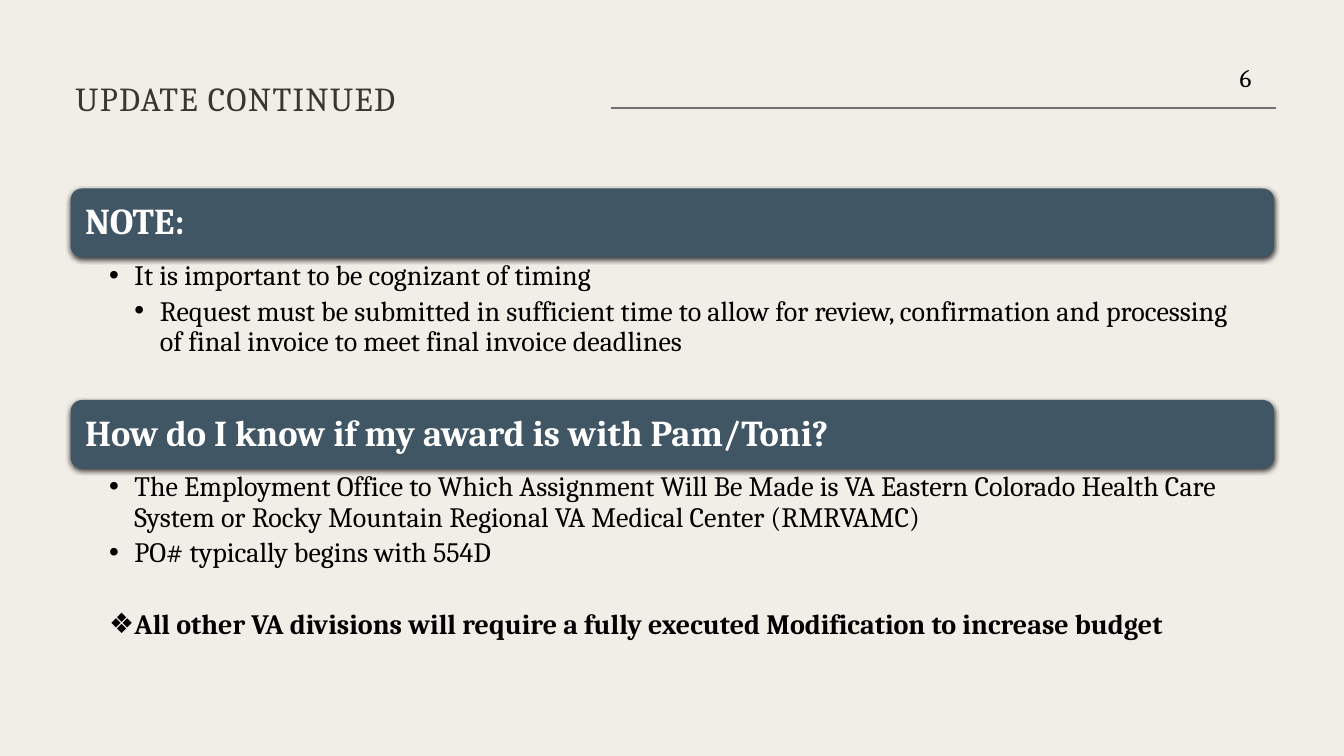
from lxml.etree import SubElement
from pptx import Presentation
from pptx.dml.color import RGBColor
from pptx.enum.shapes import MSO_CONNECTOR, MSO_SHAPE
from pptx.enum.text import MSO_ANCHOR, PP_ALIGN
from pptx.oxml.ns import qn
from pptx.util import Cm, Pt


def tint(code):
    return RGBColor.from_string(code)


class Deck:
    font = "Cambria"
    paper, ink, slate = "F1EDE7", "000000", "415665"
    gray, dark, white = "6F6F74", "3A372F", "FFFFFF"
    step = 0.64  # bullet indent per level, cm

    def __init__(self, slide):
        self.slide = slide
        fill = slide.background.fill
        fill.solid()
        fill.fore_color.rgb = tint(self.paper)

    def frame(self, shape, pads, anchor=MSO_ANCHOR.TOP):
        body = shape.text_frame
        body.word_wrap = True
        body.vertical_anchor = anchor
        (body.margin_left, body.margin_top,
         body.margin_right, body.margin_bottom) = [Cm(p) for p in pads]
        return body

    def box(self, x, y, w, h, pads, anchor=MSO_ANCHOR.TOP):
        shape = self.slide.shapes.add_textbox(Cm(x), Cm(y), Cm(w), Cm(h))
        return self.frame(shape, pads, anchor)

    def words(self, para, text, size, color, bold=False, lead=0.9):
        para.line_spacing = lead
        run = para.add_run()
        run.text = text
        face = run.font
        face.name, face.size, face.bold = self.font, Pt(size), bold
        face.color.rgb = tint(color)
        return run

    def title(self, text):
        body = self.box(1.9, 0.05, 13.31, 4.65, (0, 0, 0, 0), MSO_ANCHOR.MIDDLE)
        run = self.words(body.paragraphs[0], text, 24, self.dark, lead=Pt(34))
        run.font._element.set("spc", "100")

    def number(self, text):
        body = self.box(30.99, 1.52, 1.52, 1.02, (0.25, 0.13, 0.25, 0.13))
        self.words(body.paragraphs[0], text, 18, self.ink)

    def rule(self, x, y, end):
        line = self.slide.shapes.add_connector(
            MSO_CONNECTOR.STRAIGHT, Cm(x), Cm(y), Cm(end), Cm(y))
        line.line.color.rgb = tint(self.gray)
        line.line.width = Pt(1.75)
        SubElement(line._element.spPr, qn("a:effectLst"))

    def shade(self, shape):
        shape.shadow.inherit = False
        effect = shape._element.spPr.find(qn("a:effectLst"))
        cast = SubElement(effect, qn("a:outerShdw"), blurRad=str(Pt(4)),
                          dist=str(Pt(1.2)), dir="5400000", rotWithShape="0")
        color = SubElement(cast, qn("a:srgbClr"), val=self.ink)
        SubElement(color, qn("a:alpha"), val="75000")

    def bar(self, x, y, w, h, text):
        shape = self.slide.shapes.add_shape(
            MSO_SHAPE.ROUNDED_RECTANGLE, Cm(x), Cm(y), Cm(w), Cm(h))
        shape.fill.solid()
        shape.fill.fore_color.rgb = tint(self.slate)
        shape.line.fill.background()
        self.shade(shape)
        body = self.frame(shape, [0.28] * 4, MSO_ANCHOR.MIDDLE)
        para = body.paragraphs[0]
        para.alignment = PP_ALIGN.LEFT
        self.words(para, text, 26, self.white, bold=True)

    def points(self, x, y, w, h, items):
        body = self.box(x, y, w, h, (0.97, 0.1, 0.51, 0.1))
        for i, (level, mark, text, bold, gap) in enumerate(items):
            para = body.add_paragraph() if i else body.paragraphs[0]
            para.space_before, para.space_after = Pt(gap), Pt(4)
            self.words(para, text, 20, self.ink, bold)
            props = para._p.get_or_add_pPr()
            props.set("marL", str(Cm(self.step * level)))
            props.set("indent", str(-Cm(self.step)))
            SubElement(props, qn("a:buFont"), typeface="Arial")
            SubElement(props, qn("a:buChar"), char=mark)


# Sections: top, height of the list, heading, then
# (level, bullet, text, bold, space before) per point
parts = [
    (4.75, 3.58, "NOTE:", [
        (1, "•", "It is important to be cognizant of timing", False, 0),
        (2, "•", "Request must be submitted in sufficient time to allow for "
         "review, confirmation and processing of final invoice to meet final "
         "invoice deadlines", False, 0),
    ]),
    (10.08, 5.38, "How do I know if my award is with Pam/Toni?", [
        (1, "•", "The Employment Office to Which Assignment Will Be Made is VA "
         "Eastern Colorado Health Care System or Rocky Mountain Regional VA "
         "Medical Center (RMRVAMC)", False, 0),
        (1, "•", "PO# typically begins with 554D", False, 0),
        (1, "❖", "All other VA divisions will require a fully executed "
         "Modification to increase budget", True, 25.5),
    ]),
]


def main():
    show = Presentation()
    show.slide_width, show.slide_height = Cm(33.87), Cm(19.05)
    deck = Deck(show.slides.add_slide(show.slide_layouts[6]))

    # Header
    deck.rule(15.39, 2.72, 32.16)
    deck.title("UPDATE CONTINUED")
    deck.number("6")

    # Headed lists
    left, wide, tall = 1.78, 30.33, 1.73
    for top, high, head, items in parts:
        deck.bar(left, top, wide, tall, head)
        deck.points(left, top + tall, wide, high, items)

    show.save("out.pptx")


if __name__ == "__main__":
    main()
